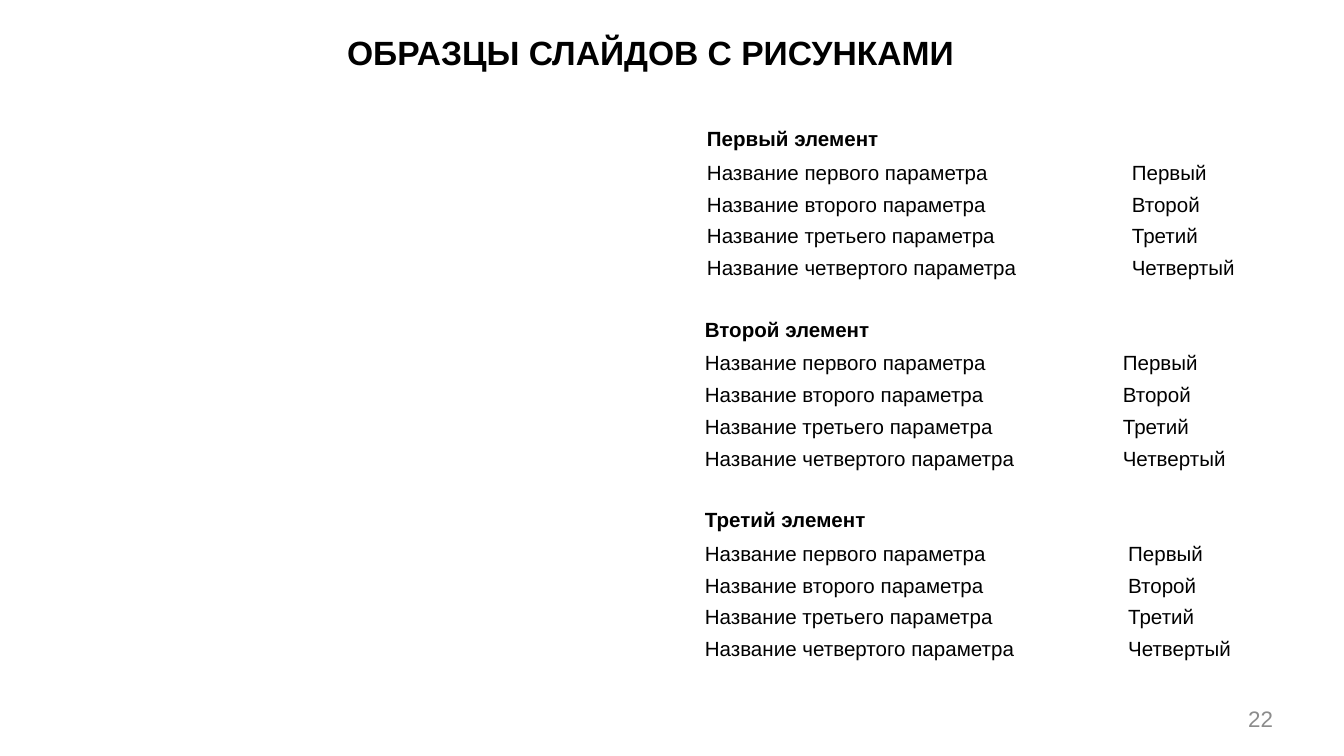
import dataclasses

import lxml.etree
import pptx
import pptx.dml.color
import pptx.enum.text
import pptx.oxml.ns
import pptx.util

Cm = pptx.util.Cm
Pt = pptx.util.Pt
Align = pptx.enum.text.PP_ALIGN
Anchor = pptx.enum.text.MSO_ANCHOR
qn = pptx.oxml.ns.qn


@dataclasses.dataclass(frozen=True)
class Theme:
    face: str = "Arial"
    ink: str = "000000"
    grey: str = "8C8C8C"
    head: int = 18
    body: int = 11
    page: int = 12
    plain: str = "{2D5ABB26-0587-4C30-8999-92F81FD0307C}"  # no style, no grid


THEME = Theme()

ROWS = [
    ("Название первого параметра", "Первый"),
    ("Название второго параметра", "Второй"),
    ("Название третьего параметра", "Третий"),
    ("Название четвертого параметра", "Четвертый"),
]

# Heading, width of the first column, side margin (cm)
PARTS = [
    ("Первый элемент", 8.03, 0.25),
    ("Второй элемент", 7.9, 0.21),
    ("Третий элемент", 8.0, 0.21),
]


def assign(item, values):
    for name, value in values.items():
        setattr(item, name, value)


def write(frame, text, size, color, bold=False, align=Align.LEFT):
    para = frame.paragraphs[0]
    para.alignment = align
    if not text:
        # Keep an empty cell as low as its row
        lxml.etree.SubElement(para._p, qn("a:endParaRPr"), sz=str(size * 100))
        return
    run = para.add_run()
    run.text = text
    assign(run.font, {"name": THEME.face, "size": Pt(size), "bold": bold})
    run.font.color.rgb = pptx.dml.color.RGBColor.from_string(color)


def add_text(slide, box, text, size, color, bold, align):
    frame = slide.shapes.add_textbox(*map(Cm, box)).text_frame
    assign(frame, {"word_wrap": True, "vertical_anchor": Anchor.MIDDLE})
    write(frame, text, size, color, bold, align)


def add_grid(slide, top, title, first, side):
    width, pitch = 11.2, 0.6
    lines = [(title, ""), *ROWS]
    shape = slide.shapes.add_table(
        len(lines), 2, Cm(13.11), Cm(top), Cm(width), Cm(pitch * len(lines)))
    table = shape.table
    assign(table, {"first_row": False, "horz_banding": False})
    table._tbl.tblPr.find(qn("a:tableStyleId")).text = THEME.plain
    for col, size in zip(table.columns, (first, width - first)):
        col.width = Cm(size)
    for i, line in enumerate(lines):
        table.rows[i].height = Cm(pitch)
        for j, text in enumerate(line):
            cell = table.cell(i, j)
            assign(cell, {"margin_left": Cm(side), "margin_right": Cm(side),
                          "margin_top": Cm(0.08), "margin_bottom": Cm(0.08)})
            cell.fill.background()
            write(cell.text_frame, text, THEME.body, THEME.ink, bold=i == 0)


def main():
    deck = pptx.Presentation()
    assign(deck, {"slide_width": Cm(25.4), "slide_height": Cm(14.29)})
    slide = deck.slides.add_slide(deck.slide_layouts[6])

    # Parameter tables
    for i, part in enumerate(PARTS):
        add_grid(slide, 2.34 + 3.6 * i, *part)

    # Title and page number
    add_text(slide, (3.89, 0.25, 16.81, 1.47), "ОБРАЗЦЫ СЛАЙДОВ С РИСУНКАМИ",
             THEME.head, THEME.ink, True, Align.CENTER)
    add_text(slide, (22.3, 13.13, 2.01, 0.91), "22",
             THEME.page, THEME.grey, False, Align.RIGHT)

    deck.save("out.pptx")


if __name__ == "__main__":
    main()
